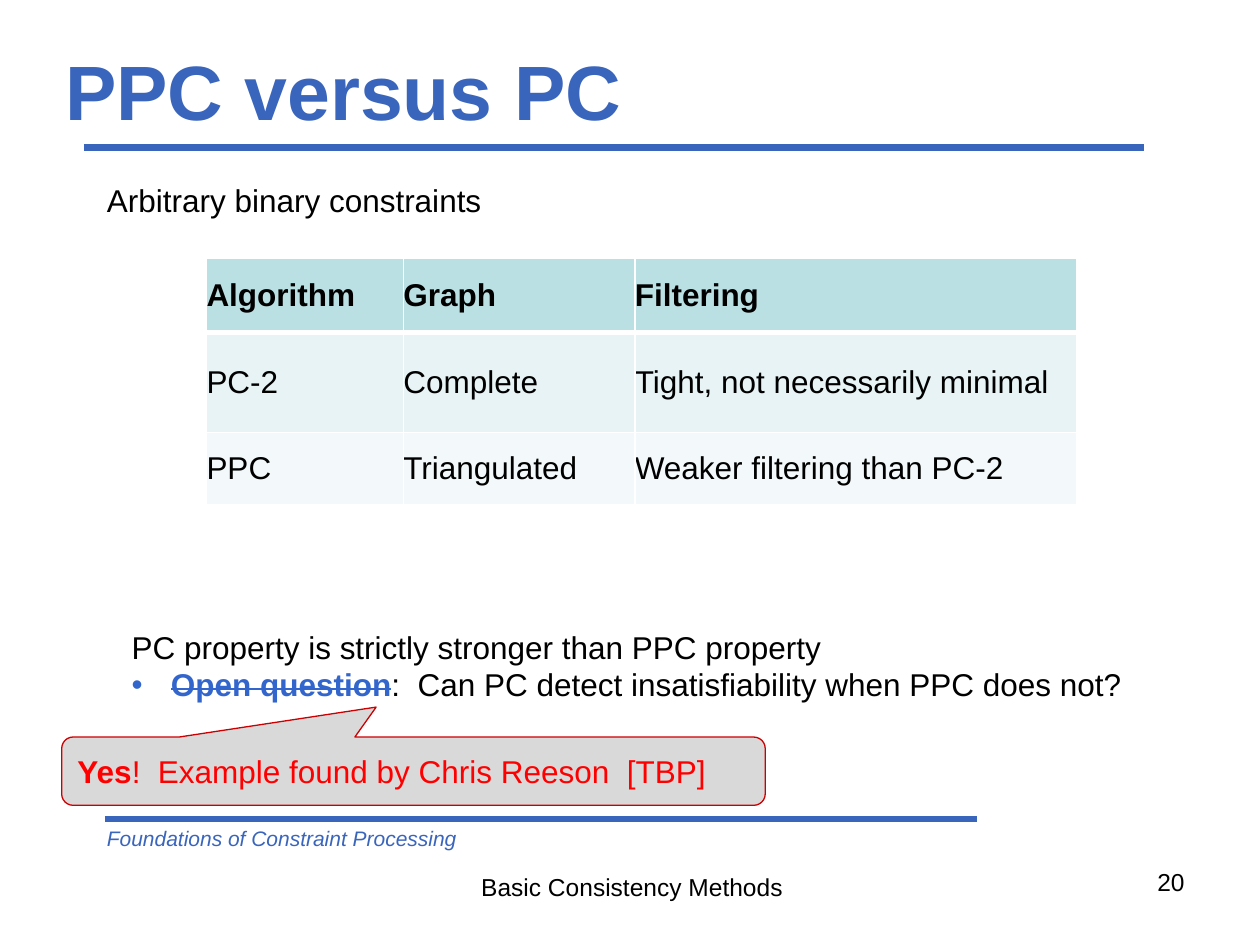
from lxml import etree
from pptx import Presentation
from pptx.dml.color import RGBColor
from pptx.enum.shapes import MSO_CONNECTOR, MSO_SHAPE
from pptx.enum.text import MSO_ANCHOR, MSO_AUTO_SIZE, PP_ALIGN
from pptx.oxml.ns import qn
from pptx.util import Pt

LEFT, CENTER, RIGHT = PP_ALIGN.LEFT, PP_ALIGN.CENTER, PP_ALIGN.RIGHT
TOP, MIDDLE = MSO_ANCHOR.TOP, MSO_ANCHOR.MIDDLE
STRAIGHT = MSO_CONNECTOR.STRAIGHT
CALLOUT = MSO_SHAPE.ROUNDED_RECTANGULAR_CALLOUT
FIXED = MSO_AUTO_SIZE.NONE

FONT = "Arial"
BLUE, BULLET_BLUE, BLACK, WHITE = "3A65BC", "3366CC", "000000", "FFFFFF"
RED, DARK_RED, GRAY = "FF0000", "CC0000", "D9D9D9"
ROW_FILLS = ["BBE0E3", "E7F3F4", "F3F9FA"]

TITLE = "PPC versus PC"
RULES = [(48, 654, 84.3), (60, 558, 468)]  # left, right, height on the page
# text, place, alignment, style
LABELS = [
    ("Foundations of Constraint Processing", (54, 468, 378, 21.6), LEFT,
     dict(size=12, color=BLUE, italic=True)),
    ("Basic Consistency Methods", (259, 494.8, 204.5, 24.2), CENTER, dict(size=14)),
    ("20", (516, 492, 168, 37.5), RIGHT, dict(size=14)),
    ("Arbitrary binary constraints", (54, 100, 558, 29), LEFT, {}),
]
TABLE = [
    ["Algorithm", "Graph", "Filtering"],
    ["PC-2", "Complete", "Tight, not necessarily minimal"],
    ["PPC", "Triangulated", "Weaker filtering than PC-2"],
]
TABLE_CORNER = (118, 147.5)
COLUMN_WIDTHS, ROW_HEIGHTS = [112.5, 132.3, 252.7], [42.4, 57.4, 41]
STATEMENT = "PC property is strictly stronger than PPC property"
QUESTION = [
    ("Open question", dict(color=BULLET_BLUE, bold=True, strike=True)),
    (":  Can PC detect insatisfiability when PPC does not?", {}),
]
ANSWER = [
    ("Yes", dict(color=RED, bold=True)),
    ("!  Example found by Chris Reeson  [TBP]", dict(color=RED)),
]


def rgb(code):
    return RGBColor.from_string(code)


def add_span(para, text, size=18, color=BLACK, bold=False, italic=False, strike=False):
    span = para.add_run()
    span.text = text
    font = span.font
    font.name, font.size, font.bold, font.italic = FONT, Pt(size), bold, italic
    font.color.rgb = rgb(color)
    if strike:
        span._r.get_or_add_rPr().set("strike", "sngStrike")


def place(box, left, top, width, height):
    box.left, box.top, box.width, box.height = map(Pt, (left, top, width, height))


def set_bullet(para, indent, symbol=None, color=None):
    """Give the paragraph a hanging bullet, or none if there is no symbol."""
    props = para._p.get_or_add_pPr()
    props.set("marL", str(Pt(indent)))
    props.set("indent", str(-Pt(indent)))
    if symbol is None:
        etree.SubElement(props, qn("a:buNone"))
        return
    bullet_color = etree.SubElement(props, qn("a:buClr"))
    etree.SubElement(bullet_color, qn("a:srgbClr"), val=color)
    etree.SubElement(props, qn("a:buFont"), typeface=FONT)
    etree.SubElement(props, qn("a:buChar"), char=symbol)


def set_borders(cell, widths):
    """Draw white cell borders; widths are left, right, top, bottom."""
    props = cell._tc.get_or_add_tcPr()
    for side, width in zip("LRTB", widths):
        line = etree.SubElement(props, qn(f"a:ln{side}"), w=str(Pt(width)))
        fill = etree.SubElement(line, qn("a:solidFill"))
        etree.SubElement(fill, qn("a:srgbClr"), val=WHITE)


def add_rule(page, left, right, height):
    rule = page.shapes.add_connector(STRAIGHT, Pt(left), Pt(height), Pt(right), Pt(height))
    rule.line.color.rgb = rgb(BLUE)
    rule.line.width = Pt(4)
    etree.SubElement(rule._element.spPr, qn("a:effectLst"))


def add_label(page, text, area, align, style):
    frame = page.shapes.add_textbox(*map(Pt, area)).text_frame
    frame.word_wrap = True
    para = frame.paragraphs[0]
    para.alignment = align
    add_span(para, text, **style)


def add_comparison(page):
    size = sum(COLUMN_WIDTHS), sum(ROW_HEIGHTS)
    table = page.shapes.add_table(
        len(TABLE), len(TABLE[0]), *map(Pt, TABLE_CORNER + size)).table
    for column, width in zip(table.columns, COLUMN_WIDTHS):
        column.width = Pt(width)
    for r, texts in enumerate(TABLE):
        table.rows[r].height = Pt(ROW_HEIGHTS[r])
        for c, text in enumerate(texts):
            cell = table.cell(r, c)
            cell.margin_left = cell.margin_right = 0
            cell.margin_top = cell.margin_bottom = 0
            cell.vertical_anchor = MIDDLE
            set_borders(cell, (1, 1, 3 if r == 1 else 1, 3 if r == 0 else 1))
            cell.fill.solid()
            cell.fill.fore_color.rgb = rgb(ROW_FILLS[r])
            add_span(cell.text_frame.paragraphs[0], text, bold=r == 0)


def fill_title(title):
    place(title, 30, 24, 648, 54)
    frame = title.text_frame
    frame.auto_size, frame.vertical_anchor = FIXED, MIDDLE
    para = frame.paragraphs[0]
    para.alignment = LEFT
    add_span(para, TITLE, size=44, color=BLUE, bold=True)


def fill_body(body):
    place(body, 68, 355, 602, 51)
    frame = body.text_frame
    frame.auto_size, frame.vertical_anchor = FIXED, TOP
    statement, question = frame.paragraphs[0], frame.add_paragraph()
    set_bullet(statement, 0)
    set_bullet(question, 22.5, "•", BULLET_BLUE)
    add_span(statement, STATEMENT)
    for text, style in QUESTION:
        add_span(question, text, **style)
    for para in (statement, question):
        para.space_before = Pt(0)


def add_answer(page):
    callout = page.shapes.add_shape(CALLOUT, Pt(35.3), Pt(421.2), Pt(402), Pt(39))
    callout.shadow.inherit = False
    for i, value in enumerate((-0.053, -0.939, 0.167)):
        callout.adjustments[i] = value
    callout.fill.solid()
    callout.fill.fore_color.rgb = rgb(GRAY)
    callout.line.color.rgb = rgb(DARK_RED)
    callout.line.width = Pt(0.75)
    callout.text_frame.vertical_anchor = MIDDLE
    para = callout.text_frame.paragraphs[0]
    para.alignment = LEFT
    for text, style in ANSWER:
        add_span(para, text, **style)


def main():
    deck = Presentation()
    deck.slide_width, deck.slide_height = Pt(720), Pt(540)
    page = deck.slides.add_slide(deck.slide_layouts[1])
    for rule in RULES:
        add_rule(page, *rule)
    fill_title(page.shapes.title)
    for label in LABELS:
        add_label(page, *label)
    add_comparison(page)
    fill_body(page.placeholders[1])
    add_answer(page)
    deck.save("out.pptx")


if __name__ == "__main__":
    main()
